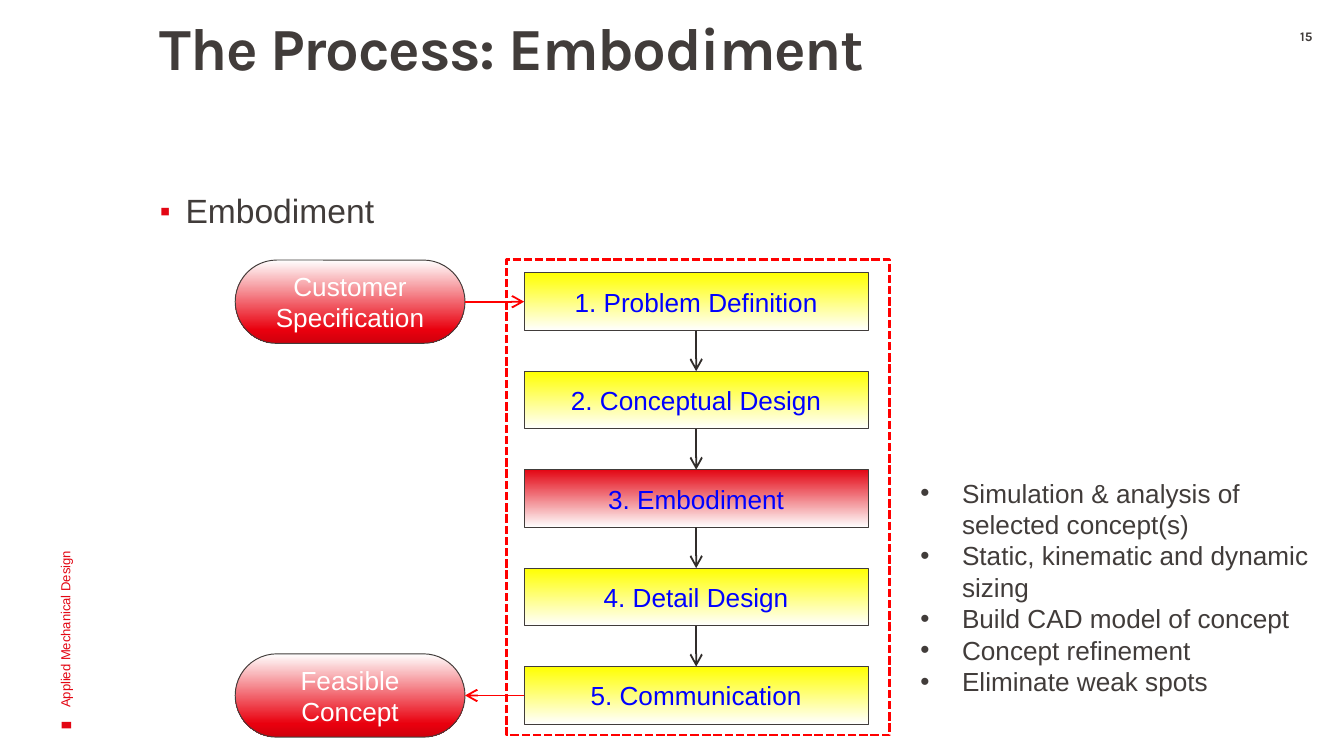
"""Build the Embodiment slide of a mechanical design process deck."""
from lxml import etree
from pptx import Presentation
from pptx.dml.color import RGBColor
from pptx.enum.dml import MSO_LINE
from pptx.enum.shapes import MSO_CONNECTOR, MSO_SHAPE
from pptx.enum.text import MSO_ANCHOR, PP_ALIGN
from pptx.oxml.ns import qn
from pptx.util import Inches, Pt

RECTANGLE, ROUNDED = MSO_SHAPE.RECTANGLE, MSO_SHAPE.ROUNDED_RECTANGLE
STRAIGHT, DASH = MSO_CONNECTOR.STRAIGHT, MSO_LINE.SQUARE_DOT
LEFT, CENTER = PP_ALIGN.LEFT, PP_ALIGN.CENTER
TOP, MIDDLE = MSO_ANCHOR.TOP, MSO_ANCHOR.MIDDLE
SITE_TOP, SITE_LEFT, SITE_BOTTOM, SITE_RIGHT = range(4)

INK = RGBColor(0x41, 0x3C, 0x3A)
ARROW_INK = RGBColor(0x31, 0x2D, 0x2B)
BRAND_RED = RGBColor(0xE3, 0x06, 0x13)
RED = RGBColor(0xFF, 0x00, 0x00)
MID_RED = RGBColor(0xE9, 0x00, 0x0E)
DEEP_RED = RGBColor(0xCF, 0x00, 0x0C)
YELLOW = RGBColor(0xFF, 0xFF, 0x00)
BLUE = RGBColor(0x00, 0x00, 0xFF)
WHITE = RGBColor(0xFF, 0xFF, 0xFF)

PILL_STOPS = [(0, WHITE), (84, MID_RED), (100, DEEP_RED)]
STEP_STOPS = [(0, YELLOW), (100, WHITE)]
CURRENT_STOPS = [(0, BRAND_RED), (100, WHITE)]

STEPS = ["1. Problem Definition", "2. Conceptual Design", "3. Embodiment",
         "4. Detail Design", "5. Communication"]
CURRENT_STEP = 2
TASKS = ["Simulation & analysis of selected concept(s)",
         "Static, kinematic and dynamic sizing",
         "Build CAD model of concept", "Concept refinement",
         "Eliminate weak spots"]

PAGE_WIDTH = 10
PAGE_HEIGHT = PAGE_WIDTH * 9 / 16
STEP_LEFT, STEP_WIDTH, STEP_HEIGHT = 3.9, 2.56, 0.43
FIRST_TOP, LAST_TOP = 2.03, 4.96
STEP_PITCH = (LAST_TOP - FIRST_TOP) / (len(STEPS) - 1)
PILL_LEFT, PILL_WIDTH, PILL_HEIGHT = 1.75, 1.71, 0.62


def add_span(para, text, size, color, font="Arial", bold=False):
    """Add one formatted run to a paragraph and return it."""
    span = para.add_run()
    span.text = text
    span.font.name = font
    span.font.size = Pt(size)
    span.font.bold = bold
    span.font.color.rgb = color
    return span


def add_text_box(page, area, insets=(0.1, 0.05, 0.1, 0.05), anchor=TOP):
    """Add a wrapping text box and return it."""
    box = page.shapes.add_textbox(*map(Inches, area))
    frame = box.text_frame
    frame.word_wrap = True
    frame.vertical_anchor = anchor
    (frame.margin_left, frame.margin_top,
     frame.margin_right, frame.margin_bottom) = map(Inches, insets)
    return box


def add_bullet(para, char, indent, color=None, percent=None):
    """Give a paragraph a hanging bullet."""
    props = para._p.get_or_add_pPr()
    props.set("marL", str(Inches(indent)))
    props.set("indent", str(-Inches(indent)))
    if color is not None:
        holder = etree.SubElement(props, qn("a:buClr"))
        etree.SubElement(holder, qn("a:srgbClr"), val=str(color))
    if percent is not None:
        etree.SubElement(props, qn("a:buSzPct"), val=str(percent * 1000))
    etree.SubElement(props, qn("a:buFont"), typeface="Arial")
    etree.SubElement(props, qn("a:buChar"), char=char)


def fill_gradient(shape, stops):
    """Fill a shape from top to bottom with (percent, colour) stops."""
    shape.fill.gradient()
    shape.fill.gradient_angle = 270
    stop_list = shape._element.spPr.find(".//" + qn("a:gsLst"))
    stop_list[:] = []
    for percent, color in stops:
        stop = etree.SubElement(stop_list, qn("a:gs"), pos=str(percent * 1000))
        etree.SubElement(stop, qn("a:srgbClr"), val=str(color))


def add_node(page, kind, area, text, stops, color):
    """Add a flowchart node with a gradient fill and centred text."""
    node = page.shapes.add_shape(kind, *map(Inches, area))
    node.shadow.inherit = False
    fill_gradient(node, stops)
    node.line.color.rgb = INK
    node.line.width = Pt(0.5)
    node.text_frame.word_wrap = True
    node.text_frame.vertical_anchor = MIDDLE
    para = node.text_frame.paragraphs[0]
    para.alignment = CENTER
    add_span(para, text, 14, color)
    return node


def add_pill(page, step_top, text):
    """Add a pill level with the step that starts at step_top."""
    top = step_top + (STEP_HEIGHT - PILL_HEIGHT) / 2
    area = (PILL_LEFT, top, PILL_WIDTH, PILL_HEIGHT)
    pill = add_node(page, ROUNDED, area, text, PILL_STOPS, WHITE)
    pill.adjustments[0] = 0.5
    return pill


def add_arrow(page, start, start_site, end, end_site, color):
    """Join two nodes with an arrow."""
    arrow = page.shapes.add_connector(STRAIGHT, 0, 0, 0, 0)
    arrow.begin_connect(start, start_site)
    arrow.end_connect(end, end_site)
    arrow.line.color.rgb = color
    arrow.line.width = Pt(1)
    etree.SubElement(arrow.line._get_or_add_ln(), qn("a:tailEnd"), type="arrow")
    etree.SubElement(arrow._element.spPr, qn("a:effectLst"))


def add_furniture(page):
    """Add the footer mark, running title and page number."""
    mark = page.shapes.add_shape(RECTANGLE, *map(Inches, (0.47, 5.36, 0.05, 0.07)))
    mark.rotation = 270
    mark.shadow.inherit = False
    mark.fill.solid()
    mark.fill.fore_color.rgb = BRAND_RED
    mark.line.fill.background()

    footer = add_text_box(page, (-1.34, 3.04, 3.65, 1), anchor=MIDDLE)
    footer.rotation = 270
    add_span(footer.text_frame.paragraphs[0], "Applied Mechanical Design", 7, BRAND_RED)

    number = add_text_box(page, (9.44, 0.21, 0.56, 0.18), (0.1, 0, 0.1, 0))
    para = number.text_frame.paragraphs[0]
    para.alignment = CENTER
    add_span(para, "15", 7, INK, "Karla", True)


def add_headings(page):
    """Add the slide title and the bulleted topic."""
    topic = add_text_box(page, (0.99, 1.4, 8.45, 3.96), (0.2, 0.05, 0.1, 0.05))
    para = topic.text_frame.paragraphs[0]
    add_bullet(para, "▪", 0.19, BRAND_RED, 90)
    para.line_spacing = 0.9
    add_span(para, "Embodiment", 18, INK)

    title = add_text_box(page, (0.99, 0.14, 6.55, 1.17), (0.2, 0, 0.08, 0.05))
    para = title.text_frame.paragraphs[0]
    para.line_spacing = 0.9
    span = add_span(para, "The Process: Embodiment", 32, INK, "Karla", True)
    span.font._element.set("spc", "-70")


def add_process(page):
    """Add the dashed frame, the steps, the pills and their arrows."""
    frame = page.shapes.add_shape(RECTANGLE, *map(Inches, (3.77, 1.93, 2.85, 3.54)))
    frame.shadow.inherit = False
    frame.fill.background()
    frame.line.color.rgb = RED
    frame.line.width = Pt(1.5)
    frame.line.dash_style = DASH

    specification = add_pill(page, FIRST_TOP, "Customer Specification")
    concept = add_pill(page, LAST_TOP, "Feasible Concept")
    steps = []
    for index, text in enumerate(STEPS):
        area = (STEP_LEFT, FIRST_TOP + index * STEP_PITCH, STEP_WIDTH, STEP_HEIGHT)
        stops = CURRENT_STOPS if index == CURRENT_STEP else STEP_STOPS
        steps.append(add_node(page, RECTANGLE, area, text, stops, BLUE))

    add_arrow(page, specification, SITE_RIGHT, steps[0], SITE_LEFT, RED)
    add_arrow(page, steps[-1], SITE_LEFT, concept, SITE_RIGHT, RED)
    for upper, lower in zip(steps, steps[1:]):
        add_arrow(page, upper, SITE_BOTTOM, lower, SITE_TOP, ARROW_INK)


def add_tasks(page):
    """Add the bulleted tasks of the current step."""
    frame = add_text_box(page, (6.75, 3.5, 3.27, 1.98)).text_frame
    for index, task in enumerate(TASKS):
        para = frame.add_paragraph() if index else frame.paragraphs[0]
        para.alignment = LEFT
        add_bullet(para, "•", 0.31)
        add_span(para, task, 14, INK)


def main():
    """Build the deck and save it."""
    deck = Presentation()
    deck.slide_width, deck.slide_height = Inches(PAGE_WIDTH), Inches(PAGE_HEIGHT)
    page = deck.slides.add_slide(deck.slide_layouts[6])
    add_furniture(page)
    add_headings(page)
    add_process(page)
    add_tasks(page)
    deck.save("out.pptx")


if __name__ == "__main__":
    main()
